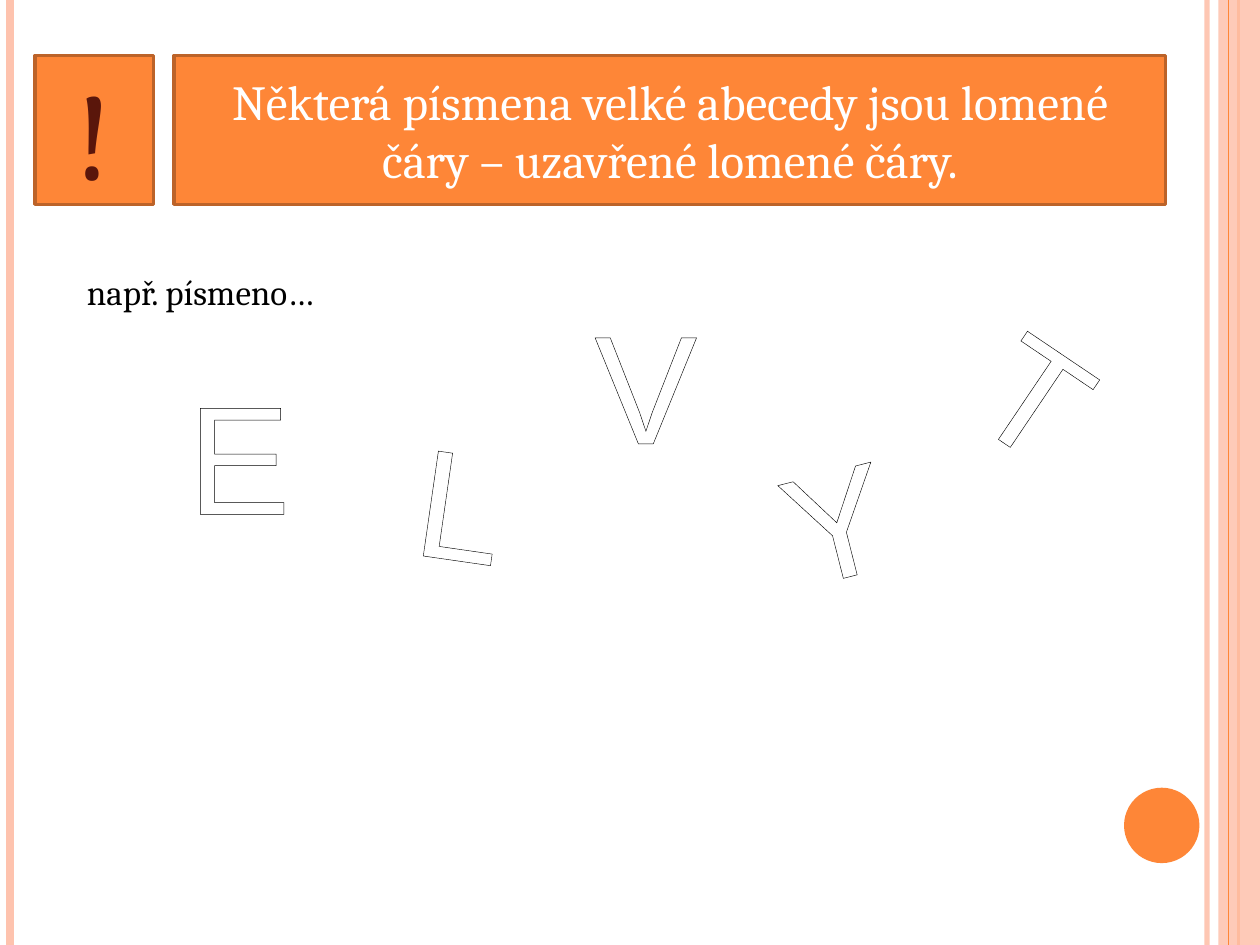
"""Build a slide on capital letters that are broken lines."""
from dataclasses import dataclass

import lxml.etree
import pptx
import pptx.dml.color
import pptx.enum.shapes
import pptx.enum.text
import pptx.oxml.ns
import pptx.shapes.base
import pptx.slide
import pptx.text.text
import pptx.util
from pptx.util import Cm

KIND = pptx.enum.shapes.MSO_SHAPE
ALIGN = pptx.enum.text.PP_ALIGN
FIT = pptx.enum.text.MSO_AUTO_SIZE
MID = pptx.enum.text.MSO_ANCHOR.MIDDLE
qn = pptx.oxml.ns.qn


@dataclass(frozen=True)
class Theme:
    orange: str = "FE8637"
    peach: str = "FEC3AE"
    brown: str = "BC6329"
    maroon: str = "5A160B"
    white: str = "FFFFFF"
    black: str = "000000"
    serif: str = "Cambria"
    sans: str = "Arial"
    title: int = 28
    mark: int = 72
    body: int = 20
    glyph: int = 88
    edge: float = 2
    stroke: float = 1.45


@dataclass(frozen=True)
class Stripe:
    x: float
    color: str
    width: float
    alpha: int = 100


@dataclass(frozen=True)
class Box:
    x: float
    width: float
    text: str
    size: int
    color: str


@dataclass(frozen=True)
class Letter:
    text: str
    x: float
    y: float
    width: float
    turn: float = 0
    wrap: bool = False


LOOK = Theme()
WIDE, HIGH = 25.4, 19.05
BOX_TOP, BOX_HIGH = 1.12, 3
GLYPH_HIGH = 4.01
BAND_X = 24.56

LEFT = [
    Stripe(24.33, LOOK.peach, 3, 93),
    Stripe(0.2, LOOK.peach, 4.5),
    Stripe(24.97, LOOK.orange, 1.5),
]
TOP = Stripe(24.77, LOOK.orange, 0.75)
BOXES = [
    Box(3.51, 19.99, "Některá písmena velké abecedy jsou lomené čáry – uzavřené lomené čáry.",
        LOOK.title, LOOK.white),
    Box(0.71, 2.39, "!", LOOK.mark, LOOK.maroon),
]
LETTERS = [
    Letter("E", 3.51, 7.14, 2.62),
    Letter("L", 8.18, 8.08, 2.26, 8.2),
    Letter("Y", 15.34, 8.43, 3, 345.7, True),
    Letter("V", 11.71, 5.72, 2.62),
    Letter("T", 19.71, 5.92, 2.44, 34),
]


def rgb(code: str) -> pptx.dml.color.RGBColor:
    return pptx.dml.color.RGBColor.from_string(code)


def fade(shape: pptx.shapes.base.BaseShape, alpha: int) -> None:
    for color in shape._element.iter(qn("a:srgbClr")):
        lxml.etree.SubElement(color, qn("a:alpha")).set("val", str(alpha * 1000))


def add_stripe(slide: pptx.slide.Slide, stripe: Stripe) -> None:
    x = Cm(stripe.x)
    line = slide.shapes.add_connector(
        pptx.enum.shapes.MSO_CONNECTOR.STRAIGHT, x, 0, x, Cm(HIGH))
    line.line.color.rgb = rgb(stripe.color)
    line.line.width = pptx.util.Pt(stripe.width)
    lxml.etree.SubElement(line._element.spPr, qn("a:effectLst"))
    if stripe.alpha < 100:
        fade(line, stripe.alpha)


def add_shape(slide: pptx.slide.Slide, kind: KIND, x: float, y: float,
              width: float, height: float, fill: str) -> pptx.shapes.base.BaseShape:
    shape = slide.shapes.add_shape(kind, Cm(x), Cm(y), Cm(width), Cm(height))
    shape.shadow.inherit = False
    shape.fill.solid()
    shape.fill.fore_color.rgb = rgb(fill)
    shape.line.fill.background()
    return shape


def add_run(frame: pptx.text.text.TextFrame, text: str, size: int, font: str,
            color: str, align: ALIGN) -> pptx.text.text._Run:
    par = frame.paragraphs[0]
    par.alignment = align
    run = par.add_run()
    run.text = text
    run.font.size = pptx.util.Pt(size)
    run.font.name = font
    run.font.color.rgb = rgb(color)
    return run


def add_box(slide: pptx.slide.Slide, box: Box) -> None:
    shape = add_shape(slide, KIND.RECTANGLE, box.x, BOX_TOP, box.width, BOX_HIGH, LOOK.orange)
    shape.line.color.rgb = rgb(LOOK.brown)
    shape.line.width = pptx.util.Pt(LOOK.edge)
    shape.text_frame.vertical_anchor = MID
    add_run(shape.text_frame, box.text, box.size, LOOK.serif, box.color, ALIGN.CENTER)


def add_text(slide: pptx.slide.Slide, x: float, y: float, width: float,
             height: float, wrap: bool) -> pptx.shapes.base.BaseShape:
    shape = slide.shapes.add_textbox(Cm(x), Cm(y), Cm(width), Cm(height))
    shape.text_frame.word_wrap = wrap
    shape.text_frame.auto_size = FIT.SHAPE_TO_FIT_TEXT
    return shape


def add_letter(slide: pptx.slide.Slide, letter: Letter) -> None:
    shape = add_text(slide, letter.x, letter.y, letter.width, GLYPH_HIGH, letter.wrap)
    shape.rotation = letter.turn
    run = add_run(shape.text_frame, letter.text, LOOK.glyph, LOOK.sans, LOOK.white, ALIGN.CENTER)
    line = lxml.etree.Element(qn("a:ln"), w=str(int(pptx.util.Pt(LOOK.stroke))))
    fill = lxml.etree.SubElement(line, qn("a:solidFill"))
    lxml.etree.SubElement(fill, qn("a:srgbClr")).set("val", LOOK.black)
    run._r.get_or_add_rPr().insert(0, line)


def main() -> None:
    deck = pptx.Presentation()
    deck.slide_width, deck.slide_height = Cm(WIDE), Cm(HIGH)
    slide = deck.slides.add_slide(deck.slide_layouts[6])
    for stripe in LEFT:
        add_stripe(slide, stripe)
    band = add_shape(slide, KIND.RECTANGLE, BAND_X, 0, WIDE - BAND_X, HIGH, LOOK.peach)
    fade(band, 87)
    add_stripe(slide, TOP)
    add_shape(slide, KIND.OVAL, 22.66, 15.88, 1.52, 1.52, LOOK.orange)
    for box in BOXES:
        add_box(slide, box)
    note = add_text(slide, 1.5, 5.33, 7.01, 1.12, True)
    add_run(note.text_frame, "např. písmeno…", LOOK.body, LOOK.serif, LOOK.black, ALIGN.LEFT)
    for letter in LETTERS:
        add_letter(slide, letter)
    deck.save("out.pptx")


if __name__ == "__main__":
    main()
